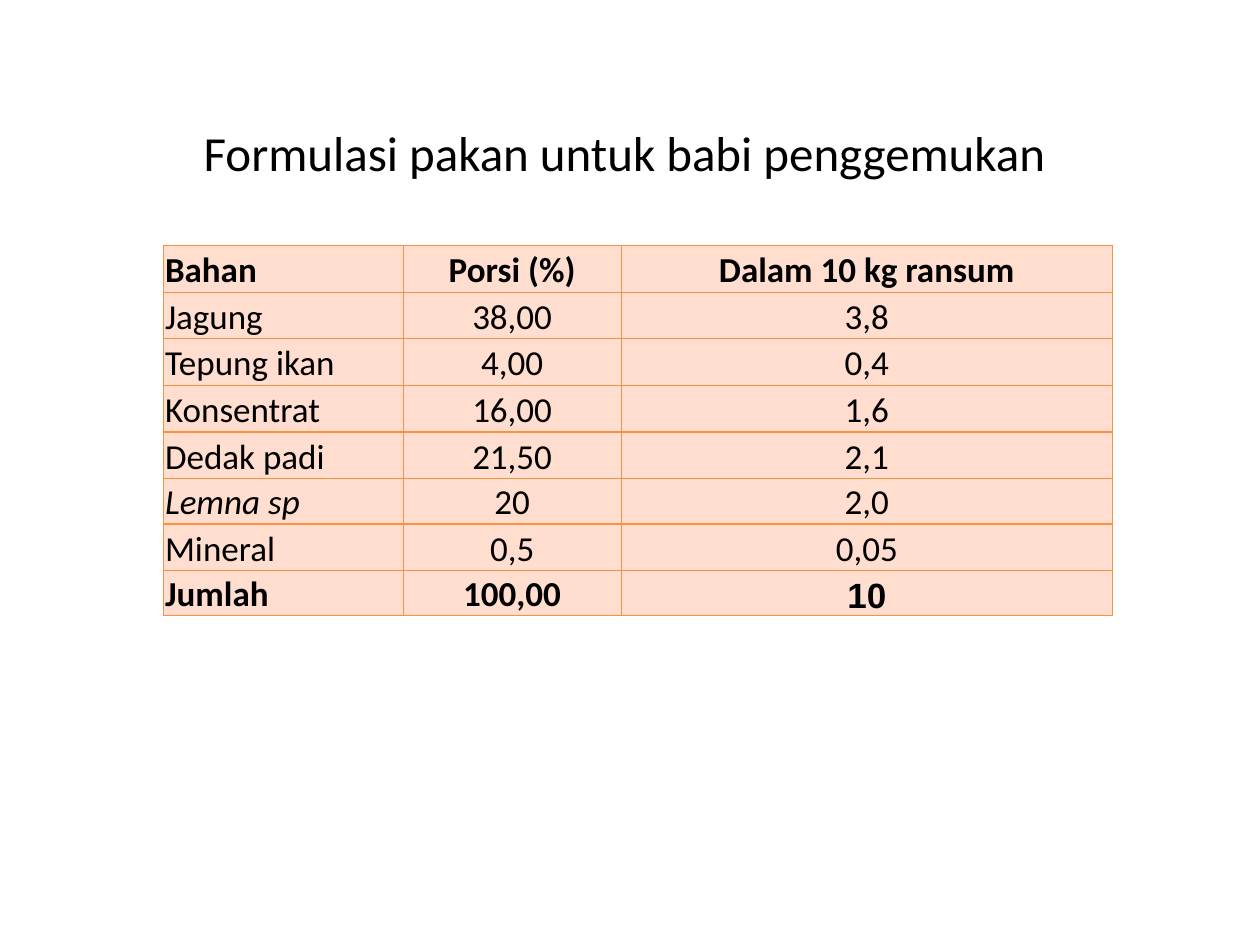
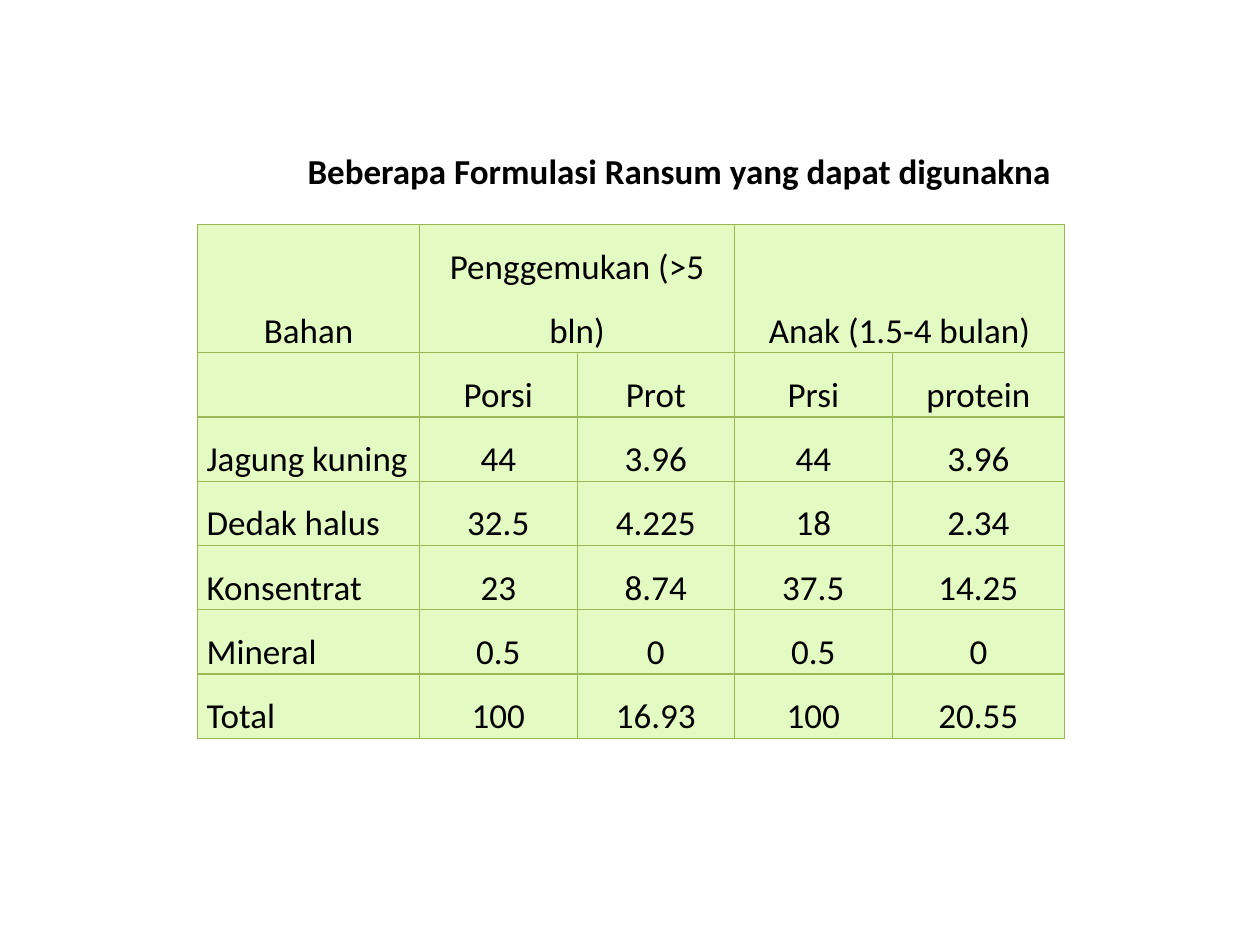
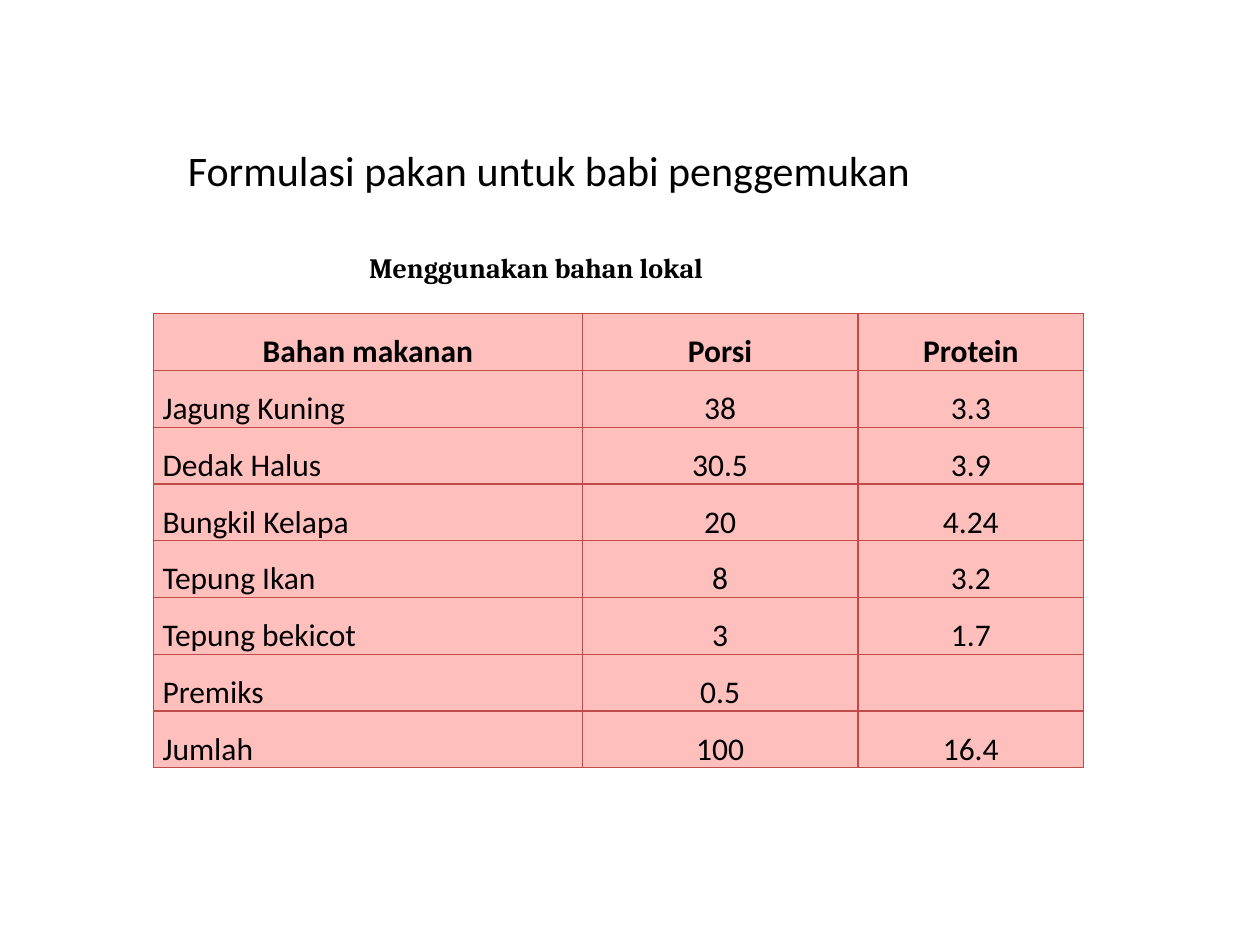
import pptx
import pptx.util
import pptx.dml.color
import pptx.enum.text
import pptx.oxml
import pptx.oxml.ns

Inches, Pt = pptx.util.Inches, pptx.util.Pt
ALIGN = pptx.enum.text.PP_ALIGN
ANCHOR = pptx.enum.text.MSO_ANCHOR

COLORS = {
    "text": "000000",
    "peach": "FFDDCF", "orange": "F69240",
    "lime": "E3FBC2", "green": "98B955",
    "pink": "FFBFBD", "red": "BF4C48",
}
FONT = "Calibri"

FATTEN = [
    ["Bahan", "Porsi (%)", "Dalam 10 kg ransum"],
    ["Jagung", "38,00", "3,8"],
    ["Tepung ikan", "4,00", "0,4"],
    ["Konsentrat", "16,00", "1,6"],
    ["Dedak padi", "21,50", "2,1"],
    ["Lemna sp", "20", "2,0"],
    ["Mineral", "0,5", "0,05"],
    ["Jumlah", "100,00", "10"],
]
RATION = [
    ["Bahan", "Penggemukan (>5 bln)", "", "Anak (1.5-4 bulan)", ""],
    ["", "Porsi", "Prot", "Prsi", "protein"],
    ["Jagung kuning", "44", "3.96", "44", "3.96"],
    ["Dedak halus", "32.5", "4.225", "18", "2.34"],
    ["Konsentrat", "23", "8.74", "37.5", "14.25"],
    ["Mineral", "0.5", "0", "0.5", "0"],
    ["Total", "100", "16.93", "100", "20.55"],
]
LOCAL = [
    ["Bahan makanan", "Porsi", "Protein"],
    ["Jagung Kuning", "38", "3.3"],
    ["Dedak Halus", "30.5", "3.9"],
    ["Bungkil Kelapa", "20", "4.24"],
    ["Tepung Ikan", "8", "3.2"],
    ["Tepung bekicot", "3", "1.7"],
    ["Premiks", "0.5", ""],
    ["Jumlah", "100", "16.4"],
]


def rgb(name):
    return pptx.dml.color.RGBColor.from_string(COLORS[name])


def style(para, size, bold=False, face=FONT, align=ALIGN.CENTER):
    para.alignment = align
    font = para.font
    font.size, font.bold, font.name = Pt(size), bold, face
    font.color.rgb = rgb("text")


def add_title(slide, box, text, size, **look):
    frame = slide.shapes.add_textbox(*map(Inches, box)).text_frame
    frame.word_wrap = True
    frame.vertical_anchor = ANCHOR.MIDDLE
    para = frame.paragraphs[0]
    para.text = text
    style(para, size, **look)


def add_edges(cell, color):
    props = cell._tc.get_or_add_tcPr()
    for side in "LRTB":
        props.append(pptx.oxml.parse_xml(
            f'<a:ln{side} {pptx.oxml.ns.nsdecls("a")} w="{Pt(0.75)}"><a:solidFill>'
            f'<a:srgbClr val="{COLORS[color]}"/></a:solidFill></a:ln{side}>'))


def add_grid(slide, spot, data, cols, rows, fill, edge, size, pads,
             space=1.0, bold=(), head=ALIGN.CENTER):
    """Place a table at spot; pads are left, top, right, bottom insets."""
    left, top = spot
    table = slide.shapes.add_table(
        len(rows), len(cols), Inches(left), Inches(top),
        Inches(sum(cols)), Inches(sum(rows))).table
    table.first_row = table.horz_banding = False
    for col, width in zip(table.columns, cols):
        col.width = Inches(width)
    for row, height in zip(table.rows, rows):
        row.height = Inches(height)
    for r, line in enumerate(data):
        for c, text in enumerate(line):
            cell = table.cell(r, c)
            add_edges(cell, edge)
            cell.fill.solid()
            cell.fill.fore_color.rgb = rgb(fill)
            (cell.margin_left, cell.margin_top,
             cell.margin_right, cell.margin_bottom) = map(Inches, pads)
            cell.vertical_anchor = ANCHOR.BOTTOM
            para = cell.text_frame.paragraphs[0]
            para.text = text
            para.line_spacing = space
            align = ALIGN.CENTER if c else ALIGN.LEFT if r else head
            style(para, size, r in bold, align=align)
    return table


def fatten_slide(slide):
    add_title(slide, (0.5, 0.86, 9, 0.69),
              "Formulasi pakan untuk babi penggemukan ", 28)
    table = add_grid(
        slide, (1.3, 1.95), FATTEN, [1.9, 1.73, 3.9],
        [0.37] * 5 + [0.36, 0.37, 0.36], "peach", "orange", 20,
        (0.01, 0.01, 0.01, 0), bold=(0, 7), head=ALIGN.LEFT)
    table.cell(5, 0).text_frame.paragraphs[0].font.italic = True
    table.cell(7, 2).text_frame.paragraphs[0].font.name = "Arial"


def ration_slide(slide):
    add_title(slide, (1.56, 1.08, 6.88, 0.55),
              "Beberapa Formulasi Ransum yang dapat digunakna", 20,
              bold=True, align=ALIGN.RIGHT)
    table = add_grid(
        slide, (1.57, 1.78), RATION, [1.76] + [1.25] * 3 + [1.37],
        [1.02] + [0.51] * 6, "lime", "green", 20,
        (0.07, 0, 0.07, 0), space=1.5)
    for c in (1, 3):
        table.cell(0, c).merge(table.cell(0, c + 1))


def local_slide(slide):
    add_grid(slide, (1.22, 2.49), LOCAL, [3.4, 2.19, 1.79], [0.45] * 8,
             "pink", "red", 18, (0.07, 0, 0.07, 0), space=1.5, bold=(0,))
    add_title(slide, (0.31, 1.94, 7.89, 0.37), "Menggunakan bahan lokal", 16,
              bold=True, face="Cambria")
    add_title(slide, (0.59, 1.07, 7.61, 0.55),
              "Formulasi pakan untuk babi penggemukan ", 24)


def main():
    deck = pptx.Presentation()
    deck.slide_width, deck.slide_height = Inches(10), Inches(7.5)
    for build in (fatten_slide, ration_slide, local_slide):
        build(deck.slides.add_slide(deck.slide_layouts[6]))
    deck.save("out.pptx")


if __name__ == "__main__":
    main()
